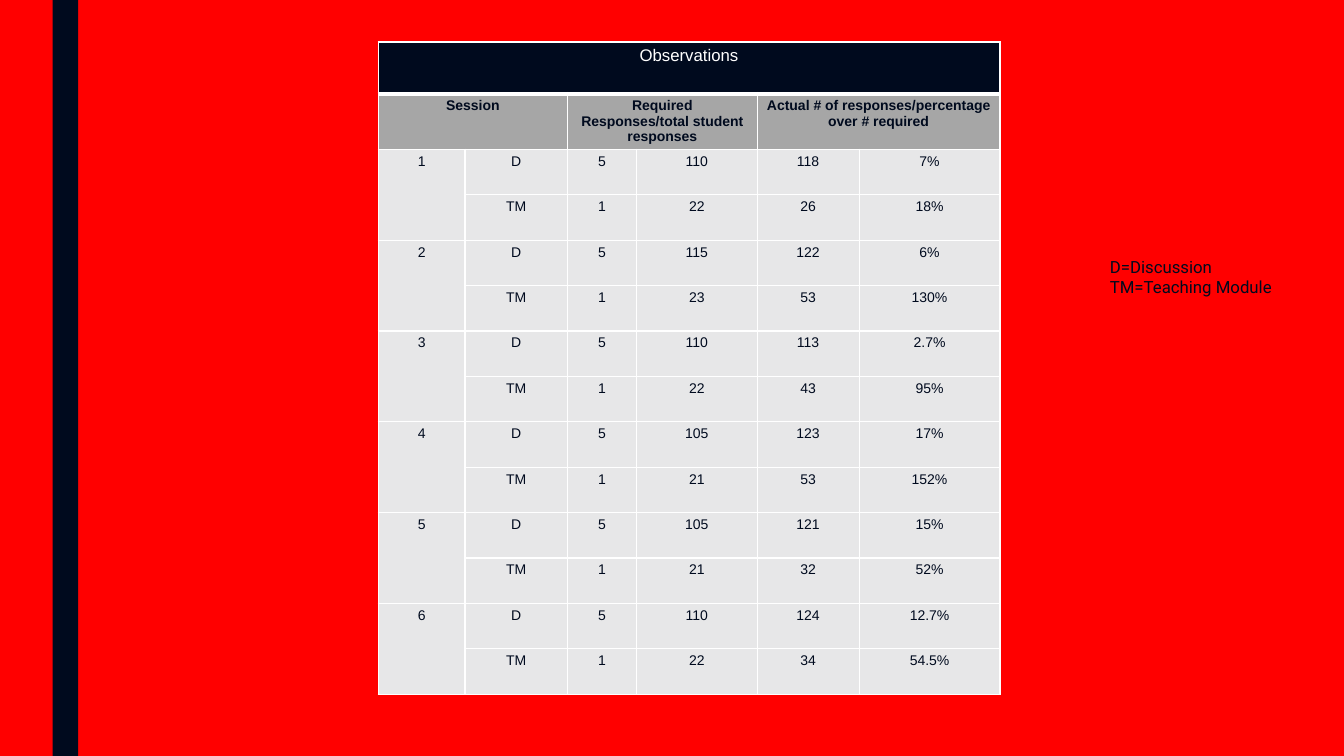
from dataclasses import dataclass

from lxml.etree import SubElement
from pptx import Presentation
from pptx.dml.color import RGBColor
from pptx.enum.shapes import MSO_SHAPE
from pptx.enum.text import MSO_AUTO_SIZE, PP_ALIGN
from pptx.oxml.ns import qn
from pptx.util import Cm, Pt


@dataclass(frozen=True)
class Theme:
    background: str = "FF0000"
    ink: str = "000A1E"
    white: str = "FFFFFF"
    header_fill: str = "A6A6A6"
    body_fill: str = "E7E7E8"
    table_font: str = "Arial"
    legend_font: str = "Roboto"
    large: int = 12
    small: int = 10
    rule: int = 1
    title_rule: int = 3


THEME = Theme()

TITLE = "Observations"
HEADERS = [
    "Session",
    "Required Responses/total student responses",
    "Actual # of responses/percentage over # required",
]
SESSIONS = [
    (("5", "110", "118", "7%"), ("1", "22", "26", "18%")),
    (("5", "115", "122", "6%"), ("1", "23", "53", "130%")),
    (("5", "110", "113", "2.7%"), ("1", "22", "43", "95%")),
    (("5", "105", "123", "17%"), ("1", "21", "53", "152%")),
    (("5", "105", "121", "15%"), ("1", "21", "32", "52%")),
    (("5", "110", "124", "12.7%"), ("1", "22", "34", "54.5%")),
]
LEGEND = ["D=Discussion", "TM=Teaching Module"]
COLUMN_WIDTHS = [2.19, 2.58, 1.74, 3.04, 2.57, 3.55]
HEAD_ROW_HEIGHT = 1.3
BODY_HEIGHT = 13.73


def rgb(color):
    return RGBColor.from_string(color)


def style_font(font, name, size, color, bold=False):
    font.name = name
    font.size = Pt(size)
    font.bold = bold
    font.color.rgb = rgb(color)


def add_borders(cell, bottom):
    tc_pr = cell._tc.get_or_add_tcPr()
    widths = {"lnL": THEME.rule, "lnR": THEME.rule, "lnT": THEME.rule, "lnB": bottom}
    for index, (tag, width) in enumerate(widths.items()):
        ln = SubElement(tc_pr, qn(f"a:{tag}"), w=str(Pt(width)))
        fill = SubElement(ln, qn("a:solidFill"))
        SubElement(fill, qn("a:srgbClr"), val=THEME.white)
        tc_pr.remove(ln)
        tc_pr.insert(index, ln)


def style_cell(cell, fill, color, size, bold=False, bottom=THEME.rule):
    cell.fill.solid()
    cell.fill.fore_color.rgb = rgb(fill)
    cell.margin_left = cell.margin_right = Cm(0.23)
    cell.margin_top = cell.margin_bottom = Cm(0.11)
    add_borders(cell, bottom)
    for p in cell.text_frame.paragraphs:
        p.alignment = PP_ALIGN.CENTER
        style_font(p.font, THEME.table_font, size, color, bold)
        for r in p.runs:
            style_font(r.font, THEME.table_font, size, color, bold)


def add_side_bar(slide, left, top, width, height):
    sp = slide.shapes.add_shape(
        MSO_SHAPE.RECTANGLE, Cm(left), Cm(top), Cm(width), Cm(height)
    )
    sp.shadow.inherit = False
    sp.fill.solid()
    sp.fill.fore_color.rgb = rgb(THEME.ink)
    sp.line.fill.background()


def fill_table(table):
    last = len(COLUMN_WIDTHS) - 1
    table.cell(0, 0).merge(table.cell(0, last))
    table.cell(0, 0).text_frame.text = TITLE
    for group, header in enumerate(HEADERS):
        col = 2 * group
        table.cell(1, col).merge(table.cell(1, col + 1))
        table.cell(1, col).text_frame.text = header
    for number, session in enumerate(SESSIONS, 1):
        top = 2 * number
        table.cell(top, 0).merge(table.cell(top + 1, 0))
        table.cell(top, 0).text_frame.text = str(number)
        for offset, (kind, values) in enumerate(zip(("D", "TM"), session)):
            for col, value in enumerate((kind, *values), 1):
                table.cell(top + offset, col).text_frame.text = value


def add_observations(slide, left, top):
    body_rows = 2 * len(SESSIONS)
    table = slide.shapes.add_table(
        body_rows + 2,
        len(COLUMN_WIDTHS),
        Cm(left),
        Cm(top),
        Cm(sum(COLUMN_WIDTHS)),
        Cm(2 * HEAD_ROW_HEIGHT + BODY_HEIGHT),
    ).table
    for column, width in zip(table.columns, COLUMN_WIDTHS):
        column.width = Cm(width)
    fill_table(table)
    for index, row in enumerate(table.rows):
        row.height = Cm(HEAD_ROW_HEIGHT if index < 2 else BODY_HEIGHT / body_rows)
        for cell in row.cells:
            if index == 0:
                style_cell(
                    cell, THEME.ink, THEME.white, THEME.large, bottom=THEME.title_rule
                )
            elif index == 1:
                style_cell(cell, THEME.header_fill, THEME.ink, THEME.small, bold=True)
            else:
                style_cell(cell, THEME.body_fill, THEME.ink, THEME.small)


def add_legend(slide, left, top, width, height):
    tf = slide.shapes.add_textbox(
        Cm(left), Cm(top), Cm(width), Cm(height)
    ).text_frame
    tf.word_wrap = True
    tf.auto_size = MSO_AUTO_SIZE.SHAPE_TO_FIT_TEXT
    tf.text = "\n".join(LEGEND)
    for p in tf.paragraphs:
        for r in p.runs:
            style_font(r.font, THEME.legend_font, THEME.large, THEME.ink)


def main():
    prs = Presentation()
    prs.slide_width = Cm(33.87)
    prs.slide_height = Cm(19.05)
    slide = prs.slides.add_slide(prs.slide_layouts[6])
    slide.background.fill.solid()
    slide.background.fill.fore_color.rgb = rgb(THEME.background)
    add_side_bar(slide, 1.33, 0, 0.64, 19.05)
    add_observations(slide, 9.53, 1.06)
    add_legend(slide, 27.72, 6.35, 5.08, 1.28)
    prs.save("out.pptx")


if __name__ == "__main__":
    main()
